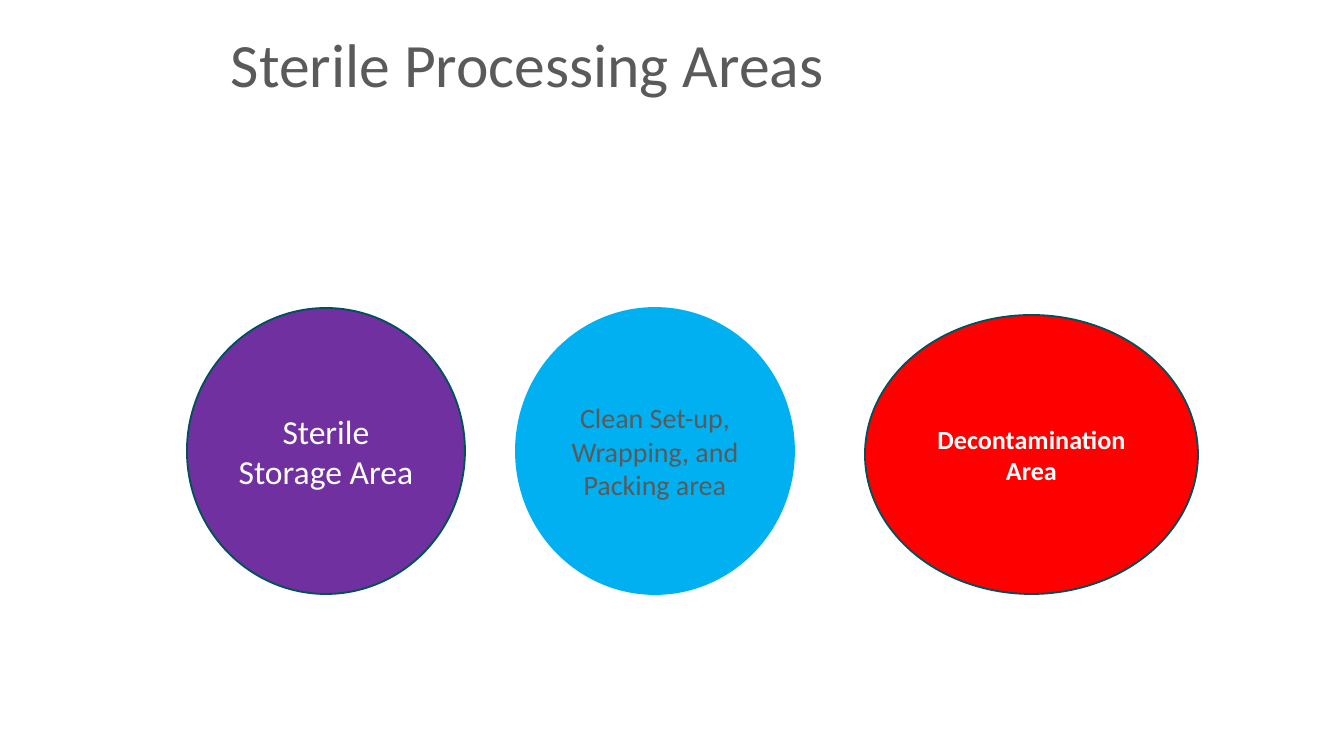
from pptx import Presentation
from pptx import util as u
from pptx.dml.color import RGBColor
from pptx.enum import shapes, text

PX = 914400 / 134.4
FONT = "Calibri"
GREY = RGBColor(0x5A, 0x5A, 0x5B)
WHITE = RGBColor(0xFF, 0xFF, 0xFF)
RED = RGBColor(0xFF, 0x00, 0x00)
BLUE = RGBColor(0x00, 0xB0, 0xF0)
PURPLE = RGBColor(0x70, 0x30, 0xA0)
TEAL = RGBColor(0x00, 0x51, 0x5B)

TITLE = "Sterile Processing Areas"
TITLE_BOX = (206, -66, 899, 202)
BASE = 594  # shared bottom edge of the areas
# words, left, width, height, fill, line, ink, size, bold
AREAS = [
    ("Decontamination Area", 865, 333, 279, RED, TEAL, WHITE, 14, True),
    ("Clean Set-up, Wrapping, and Packing area", 516, 278, 286,
     BLUE, BLUE, GREY, 15, False),
    ("Sterile Storage Area", 187, 278, 286, PURPLE, TEAL, WHITE, 18, False),
]


def px(n):
    return u.Emu(round(n * PX))


def place(shape, box):
    shape.left, shape.top, shape.width, shape.height = map(px, box)


def write(frame, words, size, ink, align, bold, insets):
    """Fill a middle-anchored frame; insets are left, top, right, bottom."""
    frame.word_wrap = True
    frame.auto_size = text.MSO_AUTO_SIZE.NONE
    frame.vertical_anchor = text.MSO_ANCHOR.MIDDLE
    (frame.margin_left, frame.margin_top,
     frame.margin_right, frame.margin_bottom) = map(px, insets)
    para = frame.paragraphs[0]
    para.alignment = align
    para.space_before = u.Pt(0)
    run = para.add_run()
    run.text = words
    font = run.font
    font.name, font.size, font.bold = FONT, u.Pt(size), bold
    font.color.rgb = ink
    return para


deck = Presentation()
deck.slide_width, deck.slide_height = px(1344), px(756)
slide = deck.slides.add_slide(deck.slide_layouts[5])

title = slide.shapes.title
place(title, TITLE_BOX)
para = write(title.text_frame, TITLE, 33, GREY, text.PP_ALIGN.LEFT, False,
             (25, 72, 13, 6))
para.line_spacing = 0.9

for words, left, width, height, fill, line, ink, size, bold in AREAS:
    area = slide.shapes.add_shape(shapes.MSO_SHAPE.OVAL, 0, 0, 0, 0)
    place(area, (left, BASE - height, width, height))
    area.shadow.inherit = False
    area.fill.solid()
    area.fill.fore_color.rgb = fill
    area.line.color.rgb = line
    area.line.width = u.Pt(1)
    write(area.text_frame, words, size, ink, text.PP_ALIGN.CENTER, bold,
          (9, 5, 9, 5))

deck.save("out.pptx")
